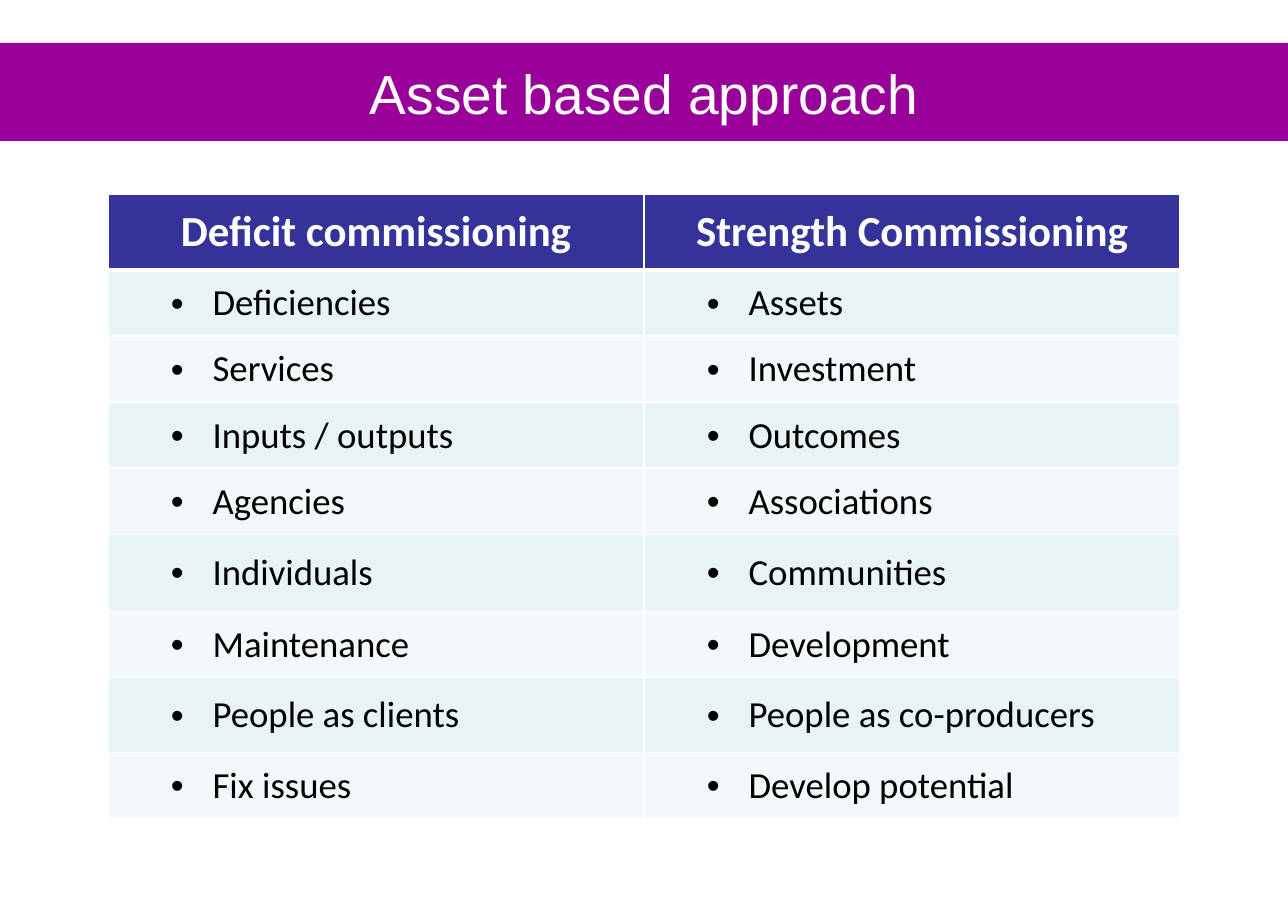
"""Build the slide that compares deficit and strength commissioning."""
from lxml import etree
from pptx import Presentation
from pptx.dml.color import RGBColor
from pptx.enum.shapes import MSO_SHAPE
from pptx.enum.text import MSO_ANCHOR, PP_ALIGN
from pptx.oxml.ns import qn
from pptx.util import Inches, Pt

RECT = MSO_SHAPE.RECTANGLE
MIDDLE = MSO_ANCHOR.MIDDLE
CENTER, LEFT = PP_ALIGN.CENTER, PP_ALIGN.LEFT

COLORS = {
    "banner": "990099",
    "header": "333399",
    "odd": "E7F3F4",
    "even": "F3F9FA",
    "white": "FFFFFF",
    "black": "000000",
}
ROWS = [
    ("Deficit commissioning", "Strength Commissioning"),
    ("Deficiencies", "Assets"),
    ("Services", "Investment"),
    ("Inputs / outputs", "Outcomes"),
    ("Agencies", "Associations"),
    ("Individuals", "Communities"),
    ("Maintenance", "Development"),
    ("People as clients", "People as co-producers"),
    ("Fix issues", "Develop potential"),
]
HEIGHTS = [0.69, 0.6, 0.6, 0.6, 0.6, 0.7, 0.6, 0.68, 0.6]


def style(para, face, size, color, bold=False):
    font = para.runs[0].font
    font.name, font.size, font.bold = face, Pt(size), bold
    font.color.rgb = RGBColor.from_string(COLORS[color])


def border(cell, side, width):
    line = etree.SubElement(cell._tc.get_or_add_tcPr(), qn(f"a:ln{side}"), w=str(Pt(width)))
    fill = etree.SubElement(line, qn("a:solidFill"))
    etree.SubElement(fill, qn("a:srgbClr"), val=COLORS["white"])


prs = Presentation()
prs.slide_width, prs.slide_height = Inches(11.69), Inches(8.27)
slide = prs.slides.add_slide(prs.slide_layouts[6])

banner = slide.shapes.add_shape(RECT, 0, Inches(0.39), prs.slide_width, Inches(0.89))
banner.shadow.inherit = False
banner.fill.solid()
banner.fill.fore_color.rgb = RGBColor.from_string(COLORS["banner"])
banner.line.fill.background()
frame = banner.text_frame
frame.text = "Asset based approach"
frame.word_wrap = True
frame.vertical_anchor = MIDDLE
frame.margin_left = frame.margin_right = Inches(0.11)
frame.margin_top = frame.margin_bottom = Inches(0.06)
title = frame.paragraphs[0]
title.alignment = CENTER
style(title, "Arial", 36, "white")

table = slide.shapes.add_table(
    len(ROWS), 2, Inches(0.98), Inches(1.76), Inches(9.73), Inches(sum(HEIGHTS))
).table
for row, height in zip(table.rows, HEIGHTS):
    row.height = Inches(height)

for r, texts in enumerate(ROWS):
    for c, text in enumerate(texts):
        cell = table.cell(r, c)
        cell.text = text
        cell.vertical_anchor = MIDDLE
        cell.margin_left = cell.margin_right = cell.margin_top = Inches(0.01)
        cell.margin_bottom = 0
        for side in "LRTB":
            heavy = (r, side) in ((0, "B"), (1, "T"))
            border(cell, side, 3 if heavy else 1)
        tint = "header" if r == 0 else "odd" if r % 2 else "even"
        cell.fill.solid()
        cell.fill.fore_color.rgb = RGBColor.from_string(COLORS[tint])
        para = cell.text_frame.paragraphs[0]
        if r == 0:
            para.alignment = CENTER
            style(para, "Calibri", 28, "white", True)
        else:
            para.alignment = LEFT
            para.level = 1
            style(para, "Calibri", 24, "black")
            props = para._p.get_or_add_pPr()
            props.set("marL", str(Inches(0.94)))
            props.set("indent", str(Inches(-0.38)))
            etree.SubElement(props, qn("a:buFont"), typeface="Arial")
            etree.SubElement(props, qn("a:buChar"), char="•")

prs.save("out.pptx")
